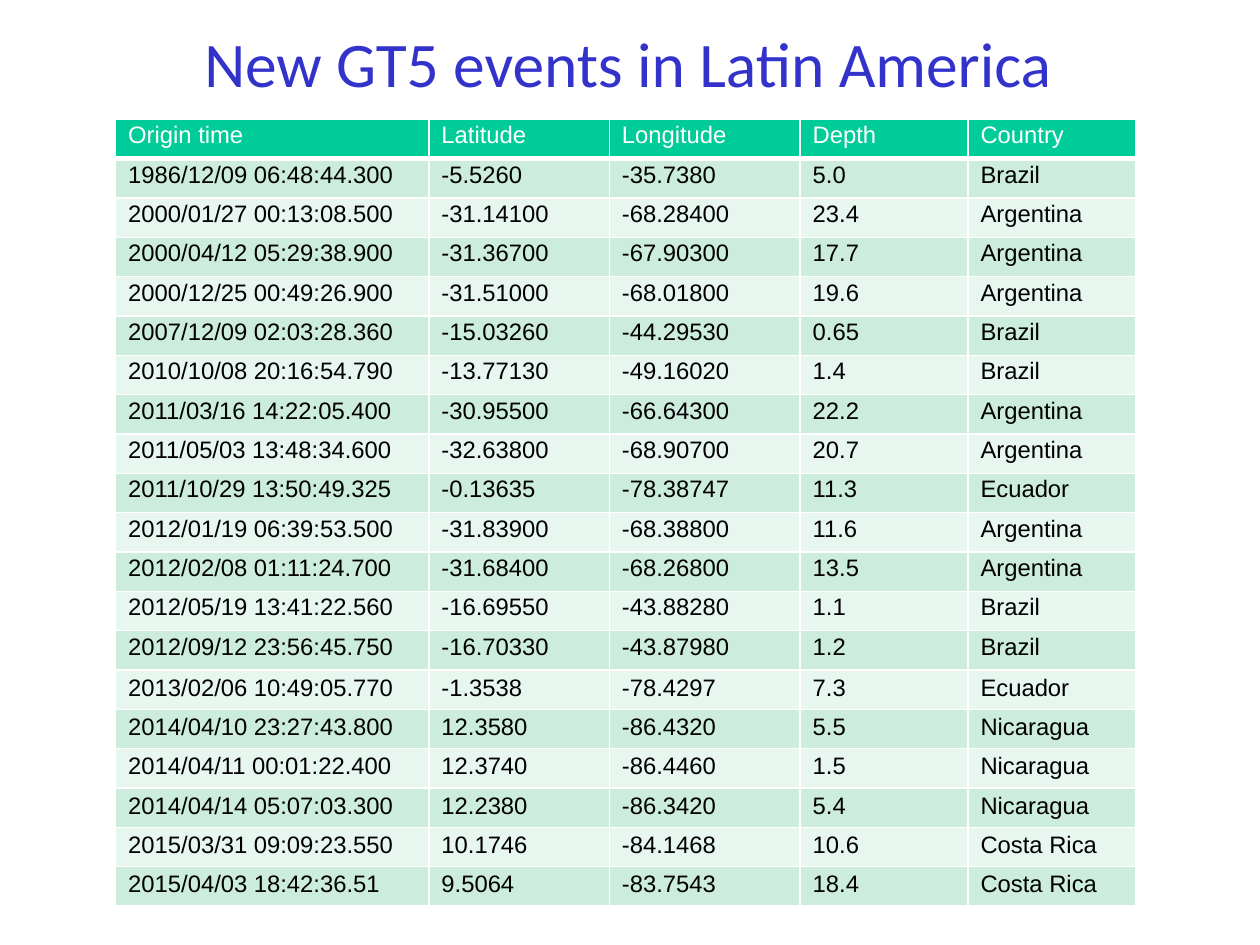
from typing import NamedTuple

from lxml.etree import SubElement
from pptx import Presentation
from pptx.dml.color import RGBColor
from pptx.enum.text import MSO_ANCHOR, MSO_AUTO_SIZE, PP_ALIGN
from pptx.oxml.ns import qn
from pptx.slide import Slide
from pptx.table import _Cell
from pptx.text.text import _Paragraph
from pptx.util import Cm, Pt

COLORS = {
    "title": "3333CC",
    "header": "00CC99",
    "odd_band": "CCECDE",
    "even_band": "E7F6EF",
    "text": "000000",
    "white": "FFFFFF",
}
LINE_SPACING = 0.93
FIRST_SINGLE_SPACED_ROW = 14


class Column(NamedTuple):
    heading: str
    width: float


class Event(NamedTuple):
    origin_time: str
    latitude: str
    longitude: str
    depth: str
    country: str


COLUMNS = [
    Column("Origin time", 6.96),
    Column("Latitude", 4.01),
    Column("Longitude", 4.24),
    Column("Depth", 3.73),
    Column("Country", 3.73),
]

EVENTS = [
    Event("1986/12/09 06:48:44.300", "-5.5260", "-35.7380", "5.0", "Brazil"),
    Event("2000/01/27 00:13:08.500", "-31.14100", "-68.28400", "23.4", "Argentina"),
    Event("2000/04/12 05:29:38.900", "-31.36700", "-67.90300", "17.7", "Argentina"),
    Event("2000/12/25 00:49:26.900", "-31.51000", "-68.01800", "19.6", "Argentina"),
    Event("2007/12/09 02:03:28.360", "-15.03260", "-44.29530", "0.65", "Brazil"),
    Event("2010/10/08 20:16:54.790", "-13.77130", "-49.16020", "1.4", "Brazil"),
    Event("2011/03/16 14:22:05.400", "-30.95500", "-66.64300", "22.2", "Argentina"),
    Event("2011/05/03 13:48:34.600", "-32.63800", "-68.90700", "20.7", "Argentina"),
    Event("2011/10/29 13:50:49.325", "-0.13635", "-78.38747", "11.3", "Ecuador"),
    Event("2012/01/19 06:39:53.500", "-31.83900", "-68.38800", "11.6", "Argentina"),
    Event("2012/02/08 01:11:24.700", "-31.68400", "-68.26800", "13.5", "Argentina"),
    Event("2012/05/19 13:41:22.560", "-16.69550", "-43.88280", "1.1", "Brazil"),
    Event("2012/09/12 23:56:45.750", "-16.70330", "-43.87980", "1.2", "Brazil"),
    Event("2013/02/06 10:49:05.770", "-1.3538", "-78.4297", "7.3", "Ecuador"),
    Event("2014/04/10 23:27:43.800", "12.3580", "-86.4320", "5.5", "Nicaragua"),
    Event("2014/04/11 00:01:22.400", "12.3740", "-86.4460", "1.5", "Nicaragua"),
    Event("2014/04/14 05:07:03.300", "12.2380", "-86.3420", "5.4", "Nicaragua"),
    Event("2015/03/31 09:09:23.550", "10.1746", "-84.1468", "10.6", "Costa Rica"),
    Event("2015/04/03 18:42:36.51", "9.5064", "-83.7543", "18.4", "Costa Rica"),
]


def format_paragraph(
    paragraph: _Paragraph, font_name: str, size: float, color: str, spacing: float
) -> None:
    paragraph.line_spacing = spacing
    for run in paragraph.runs:
        run.font.name = font_name
        run.font.size = Pt(size)
        run.font.bold = False
        run.font.color.rgb = RGBColor.from_string(COLORS[color])


def add_borders(cell: _Cell, bottom_width: float) -> None:
    properties = cell._tc.get_or_add_tcPr()
    widths = {"a:lnL": 1, "a:lnR": 1, "a:lnT": 1, "a:lnB": bottom_width}
    for tag, width in widths.items():
        line = SubElement(properties, qn(tag), w=str(Pt(width)))
        fill = SubElement(line, qn("a:solidFill"))
        SubElement(fill, qn("a:srgbClr"), val=COLORS["white"])


def fill_cell(cell: _Cell, text: str, row_index: int) -> None:
    is_header = row_index == 0
    band = "odd_band" if row_index % 2 else "even_band"
    add_borders(cell, 3 if is_header else 1)
    cell.fill.solid()
    cell.fill.fore_color.rgb = RGBColor.from_string(
        COLORS["header" if is_header else band]
    )
    cell.margin_left = cell.margin_right = Cm(0.28)
    cell.margin_top = cell.margin_bottom = Cm(0.11)
    cell.text_frame.text = text
    format_paragraph(
        cell.text_frame.paragraphs[0],
        "Arial",
        15,
        "white" if is_header else "text",
        LINE_SPACING if row_index < FIRST_SINGLE_SPACED_ROW else 1.0,
    )


def add_title(slide: Slide) -> None:
    title = slide.shapes.title
    title.left, title.top = Cm(1.35), Cm(0.41)
    title.width, title.height = Cm(25.2), Cm(2.11)
    frame = title.text_frame
    frame.text = "New GT5 events in Latin America"
    frame.auto_size = MSO_AUTO_SIZE.NONE
    frame.word_wrap = True
    frame.vertical_anchor = MSO_ANCHOR.MIDDLE
    frame.margin_left = frame.margin_right = Cm(0)
    frame.margin_top = frame.margin_bottom = Cm(0)
    paragraph = frame.paragraphs[0]
    paragraph.alignment = PP_ALIGN.CENTER
    format_paragraph(paragraph, "Calibri", 40, "title", LINE_SPACING)


def add_event_table(slide: Slide) -> None:
    rows = [[column.heading for column in COLUMNS], *EVENTS]
    width = sum(column.width for column in COLUMNS)
    table = slide.shapes.add_table(
        len(rows), len(COLUMNS), Cm(2.57), Cm(2.65), Cm(width), Cm(17.48)
    ).table
    table.horz_banding = False
    for table_column, column in zip(table.columns, COLUMNS):
        table_column.width = Cm(column.width)
    for row_index, row in enumerate(rows):
        for column_index, text in enumerate(row):
            fill_cell(table.cell(row_index, column_index), text, row_index)


def main() -> None:
    """Build the slide listing the new GT5 events in Latin America."""
    presentation = Presentation()
    presentation.slide_width, presentation.slide_height = Cm(28), Cm(21)
    slide = presentation.slides.add_slide(presentation.slide_layouts[5])
    add_title(slide)
    add_event_table(slide)
    presentation.save("out.pptx")


if __name__ == "__main__":
    main()
